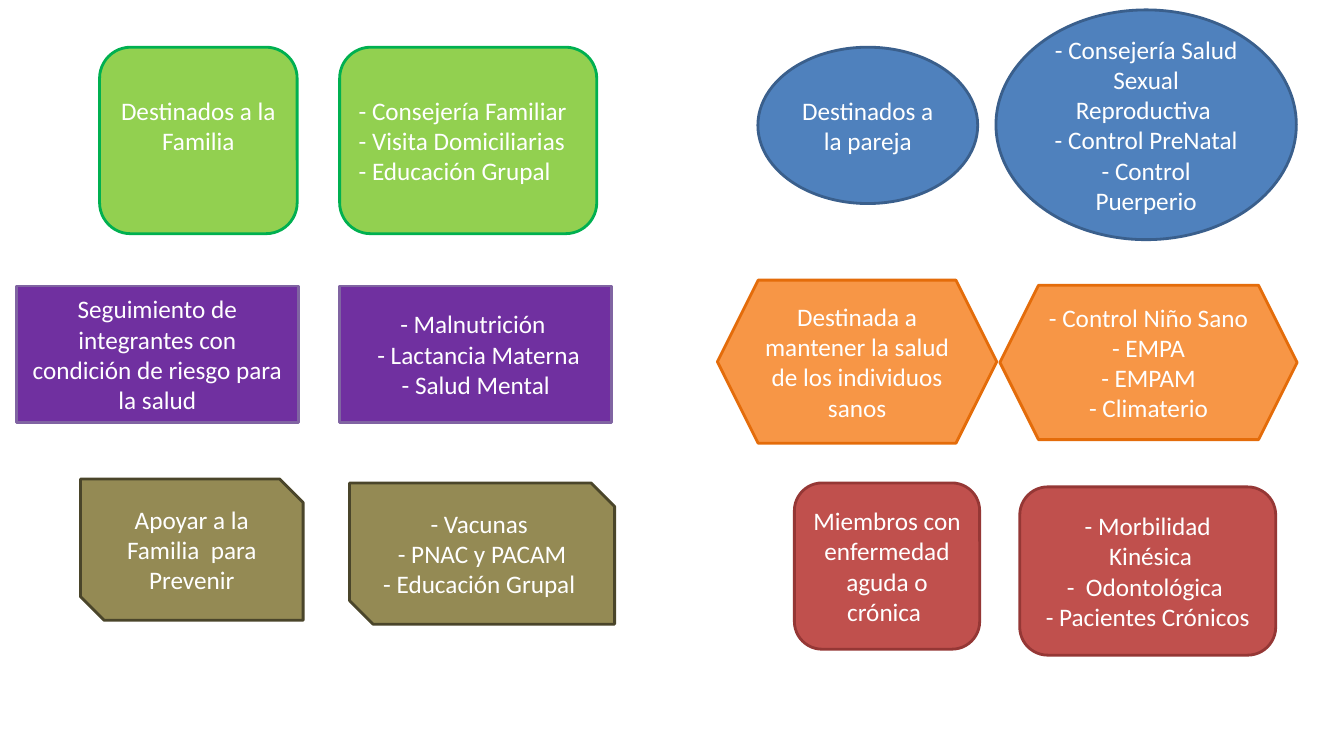
from dataclasses import dataclass

from pptx import Presentation
from pptx.dml.color import RGBColor
from pptx.enum.shapes import MSO_SHAPE
from pptx.enum.text import MSO_ANCHOR, PP_ALIGN
from pptx.slide import Slide
from pptx.util import Cm, Pt

RECTANGLE = MSO_SHAPE.RECTANGLE
ROUNDED = MSO_SHAPE.ROUNDED_RECTANGLE
OVAL = MSO_SHAPE.OVAL
HEXAGON = MSO_SHAPE.HEXAGON
SNIPPED = MSO_SHAPE.SNIP_2_DIAG_RECTANGLE
MIDDLE = MSO_ANCHOR.MIDDLE
LEFT = PP_ALIGN.LEFT
CENTER = PP_ALIGN.CENTER

FONT = "Calibri"
FONT_SIZE = Pt(18)
OUTLINE_WIDTH = Pt(2)
COLORS = {
    "text": "FFFFFF",
    "green": "92D050", "green edge": "00B050",
    "blue": "4F81BD", "blue edge": "3A5F8C",
    "purple": "7030A0", "purple edge": "8064A2",
    "orange": "F79646", "orange edge": "E46C0A",
    "olive": "948A54", "olive edge": "4A452A",
    "red": "C0504D", "red edge": "953735",
}


@dataclass(frozen=True)
class Box:
    """One labelled shape, measured in centimetres."""
    left: float
    top: float
    width: float
    height: float
    lines: tuple[str, ...]
    align: PP_ALIGN = CENTER
    bottom_inset: float = 0.13


@dataclass(frozen=True)
class Program:
    """A pair of equally styled shapes: the aim and its activities."""
    outline: MSO_SHAPE
    color: str
    aim: Box
    activities: Box


PROGRAMS = (
    Program(
        ROUNDED, "green",
        Box(2.51, 1.19, 4.98, 4.7, ("Destinados a la Familia",), bottom_inset=0.9),
        Box(8.56, 1.19, 6.48, 4.7,
            ("- Consejería Familiar", "- Visita Domiciliarias", "- Educación Grupal"), LEFT),
    ),
    Program(
        OVAL, "blue",
        Box(19.1, 1.19, 5.54, 3.94, ("Destinados a la pareja",)),
        Box(25.1, 0.25, 7.57, 5.79,
            ("- Consejería Salud Sexual Reproductiva ", "- Control PreNatal",
             "- Control Puerperio")),
    ),
    Program(
        RECTANGLE, "purple",
        Box(0.41, 7.21, 7.11, 3.43,
            ("Seguimiento de integrantes con condición de riesgo para la salud",)),
        Box(8.56, 7.21, 6.86, 3.43,
            ("- Malnutrición ", " - Lactancia Materna", "- Salud Mental")),
    ),
    Program(
        HEXAGON, "orange",
        Box(18.08, 7.06, 7.04, 4.11,
            ("Destinada a mantener la salud de los individuos sanos",)),
        Box(25.2, 7.19, 7.49, 3.89,
            ("- Control Niño Sano", "- EMPA", "- EMPAM", "- Climaterio")),
    ),
    Program(
        SNIPPED, "olive",
        Box(2.03, 12.07, 5.61, 3.56, ("Apoyar a la Familia  para Prevenir",)),
        Box(8.81, 12.17, 6.68, 3.56,
            ("- Vacunas ", "- PNAC y PACAM", "- Educación Grupal ")),
    ),
    Program(
        ROUNDED, "red",
        Box(20.02, 12.17, 4.67, 4.19, ("Miembros con enfermedad aguda o crónica ",)),
        Box(25.7, 12.27, 6.45, 4.24,
            ("- Morbilidad", " Kinésica", "-  Odontológica ", "- Pacientes Crónicos")),
    ),
)


def rgb(name: str) -> RGBColor:
    return RGBColor.from_string(COLORS[name])


def draw_box(slide: Slide, box: Box, outline: MSO_SHAPE, color: str) -> None:
    shape = slide.shapes.add_shape(
        outline, Cm(box.left), Cm(box.top), Cm(box.width), Cm(box.height))
    shape.shadow.inherit = False
    shape.fill.solid()
    shape.fill.fore_color.rgb = rgb(color)
    shape.line.color.rgb = rgb(f"{color} edge")
    shape.line.width = OUTLINE_WIDTH

    frame = shape.text_frame
    frame.word_wrap = True
    frame.vertical_anchor = MIDDLE
    frame.margin_bottom = Cm(box.bottom_inset)
    frame.text = "\n".join(box.lines)
    for paragraph in frame.paragraphs:
        paragraph.alignment = box.align
        for run in paragraph.runs:
            run.font.name = FONT
            run.font.size = FONT_SIZE
            run.font.color.rgb = rgb("text")


def main() -> None:
    presentation = Presentation()
    presentation.slide_width = Cm(33.87)
    presentation.slide_height = Cm(19.05)
    slide = presentation.slides.add_slide(presentation.slide_layouts[6])
    for program in PROGRAMS:
        for box in (program.aim, program.activities):
            draw_box(slide, box, program.outline, program.color)
    presentation.save("out.pptx")


if __name__ == "__main__":
    main()
